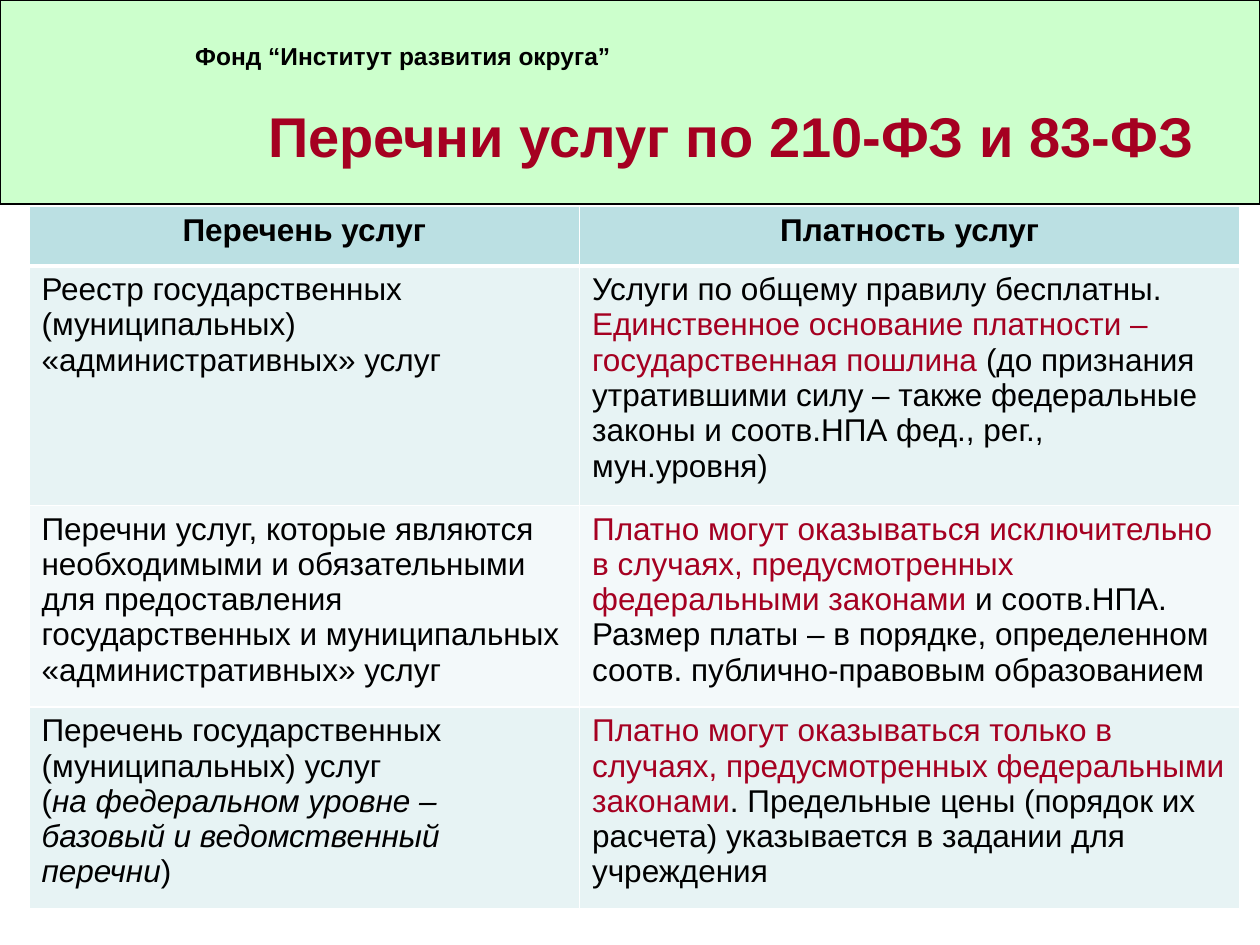
import pptx
import pptx.dml.color
import pptx.enum.shapes
import pptx.enum.text
import pptx.oxml
import pptx.oxml.ns
import pptx.util
from pptx.util import Inches

BLACK, RED, WHITE = "000000", "A50021", "FFFFFF"
CENTER = pptx.enum.text.PP_ALIGN.CENTER
HEADER_FILL = "BBE0E3"
BAND_FILLS = ["E7F3F4", "F3F9FA"]
COLUMN_WIDTHS = [4.37, 5.24]
ROW_HEIGHTS = [0.47, 1.9, 1.6, 1.6]

HEADINGS = ["Перечень услуг", "Платность услуг"]
SERVICES = [
    (
        [("Реестр государственных (муниципальных) «административных» услуг", {})],
        [
            ("Услуги по общему правилу бесплатны. ", {}),
            ("Единственное основание платности – государственная пошлина ", {"color": RED}),
            ("(до признания утратившими силу – также федеральные законы и соотв.НПА "
             "фед., рег., мун.уровня)", {}),
        ],
    ),
    (
        [("Перечни услуг, которые являются необходимыми и обязательными для предоставления "
          "государственных и муниципальных «административных» услуг", {})],
        [
            ("Платно могут оказываться исключительно в случаях, предусмотренных "
             "федеральными законами", {"color": RED}),
            (" и соотв.НПА. Размер платы – в порядке, определенном соотв. "
             "публично-правовым образованием", {}),
        ],
    ),
    (
        [
            ("Перечень государственных (муниципальных) услуг ", {}),
            ("\n", {}),
            ("(", {}),
            ("на федеральном уровне – базовый и ведомственный перечни", {"italic": True}),
            (")", {}),
        ],
        [
            ("Платно могут оказываться только в случаях, предусмотренных федеральными законами",
             {"color": RED}),
            (". Предельные цены (порядок их расчета) указывается в задании для учреждения", {}),
        ],
    ),
]


def rgb(value):
    return pptx.dml.color.RGBColor.from_string(value)


class SlideBuilder:
    """Holds the text style and the current slide, and draws each kind of element."""

    def __init__(self, page, font="Arial"):
        self.page = page
        self.font = font

    def add_spans(self, para, spans, size, bold=False):
        for text, style in spans:
            if text == "\n":
                para.add_line_break()
                continue
            span = para.add_run()
            span.text = text
            span.font.name = self.font
            span.font.size = pptx.util.Pt(size)
            span.font.bold = bold
            span.font.italic = style.get("italic", False)
            span.font.color.rgb = rgb(style.get("color", BLACK))

    def band(self, left, top, width, height, fill):
        shape = self.page.shapes.add_shape(
            pptx.enum.shapes.MSO_SHAPE.RECTANGLE,
            Inches(left), Inches(top), Inches(width), Inches(height))
        shape.shadow.inherit = False
        shape.fill.solid()
        shape.fill.fore_color.rgb = rgb(fill)
        shape.line.color.rgb = rgb(BLACK)
        shape.line.width = pptx.util.Pt(0.75)

    def text(self, left, top, width, height, text, size, color=BLACK, align=None,
             anchor=pptx.enum.text.MSO_ANCHOR.TOP):
        box = self.page.shapes.add_textbox(
            Inches(left), Inches(top), Inches(width), Inches(height))
        box.text_frame.word_wrap = True
        box.text_frame.vertical_anchor = anchor
        para = box.text_frame.paragraphs[0]
        para.alignment = align
        self.add_spans(para, [(text, {"color": color})], size, bold=True)

    def border(self, cell, side, width):
        line = pptx.oxml.parse_xml(
            f'<a:ln{side} {pptx.oxml.ns.nsdecls("a")} w="{pptx.util.Pt(width)}">'
            f'<a:solidFill><a:srgbClr val="{WHITE}"/></a:solidFill></a:ln{side}>')
        cell._tc.get_or_add_tcPr().append(line)

    def cell(self, cell, spans, fill, top_line, bottom_line, align=None, bold=False):
        for side, width in zip("LRTB", (1, 1, top_line, bottom_line)):
            self.border(cell, side, width)
        cell.fill.solid()
        cell.fill.fore_color.rgb = rgb(fill)
        para = cell.text_frame.paragraphs[0]
        para.alignment = align
        self.add_spans(para, spans, 18, bold)

    def table(self, left, top, headings, rows):
        table = self.page.shapes.add_table(
            len(rows) + 1, len(headings), Inches(left), Inches(top),
            Inches(sum(COLUMN_WIDTHS)), Inches(sum(ROW_HEIGHTS))).table
        for column, width in zip(table.columns, COLUMN_WIDTHS):
            column.width = Inches(width)
        for row, height in zip(table.rows, ROW_HEIGHTS):
            row.height = Inches(height)
        for column, heading in enumerate(headings):
            self.cell(table.cell(0, column), [(heading, {})], HEADER_FILL, 1, 3, CENTER, True)
        for number, row in enumerate(rows, start=1):
            for column, spans in enumerate(row):
                fill = BAND_FILLS[(number - 1) % 2]
                self.cell(table.cell(number, column), spans, fill, 3 if number == 1 else 1, 1)


def main():
    deck = pptx.Presentation()
    deck.slide_width, deck.slide_height = Inches(10), Inches(7.5)
    builder = SlideBuilder(deck.slides.add_slide(deck.slide_layouts[6]))
    builder.band(0, 0, 10, 1.62, "CCFFCC")
    builder.text(1.61, 0.6, 8.39, 0.95, "Перечни услуг по 210-ФЗ и 83-ФЗ", 32, RED, CENTER,
                 pptx.enum.text.MSO_ANCHOR.MIDDLE)
    builder.text(1.45, 0.28, 4.88, 0.31, "Фонд “Институт развития округа”", 14)
    builder.table(0.23, 1.64, HEADINGS, SERVICES)
    deck.save("out.pptx")


if __name__ == "__main__":
    main()
